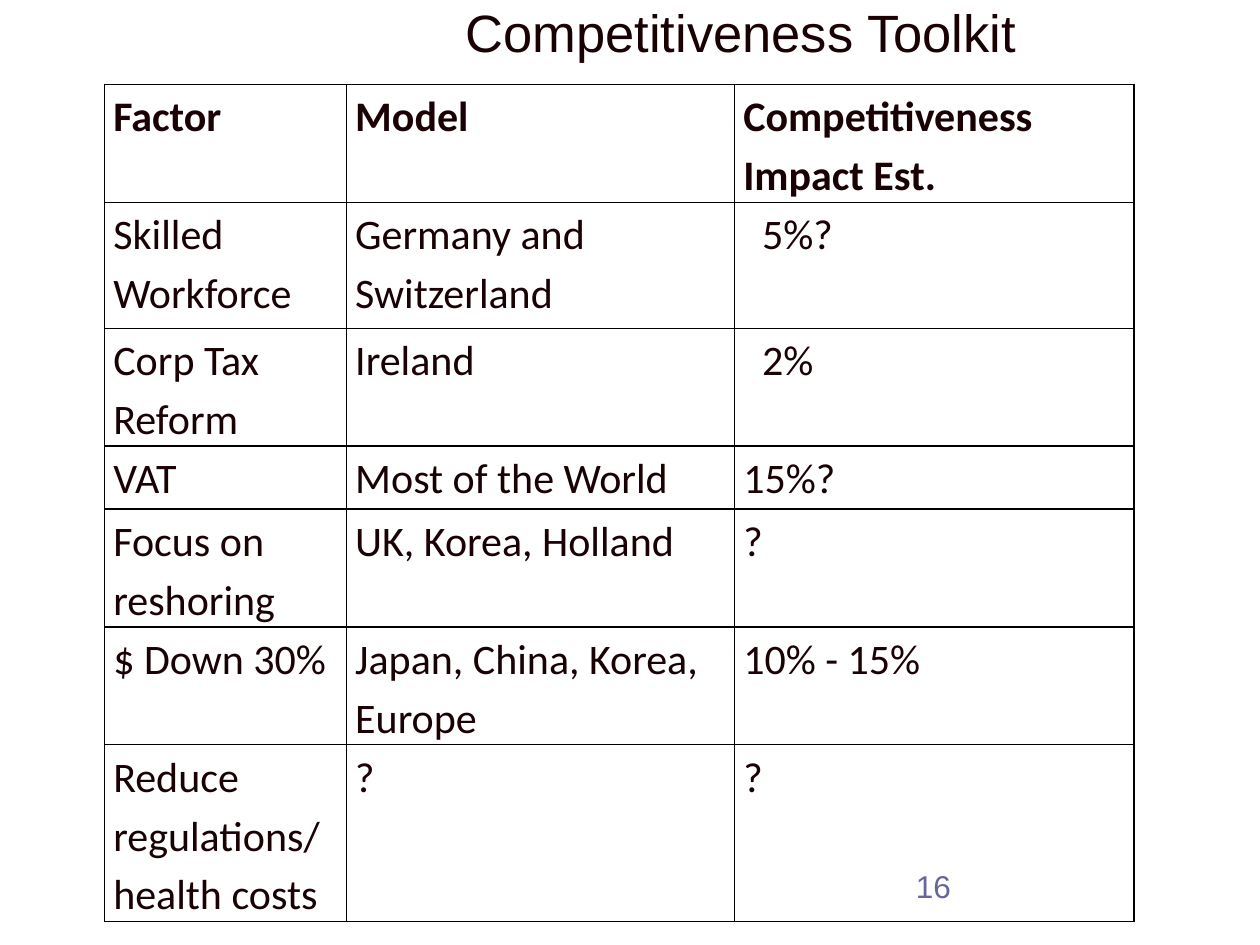
from dataclasses import dataclass

from lxml import etree
from pptx import Presentation
from pptx.dml.color import RGBColor
from pptx.enum.text import MSO_ANCHOR, PP_ALIGN
from pptx.oxml.ns import qn
from pptx.util import Inches, Pt

MIDDLE = MSO_ANCHOR.MIDDLE
CENTER = PP_ALIGN.CENTER
TITLE_ONLY = 5


@dataclass(frozen=True)
class Theme:
    """Colours, fonts and type sizes of the slide."""
    ink: str = "190104"
    rule: str = "000000"
    page: str = "666699"
    head: str = "Arial"
    body: str = "Calibri"
    title_size: int = 30
    cell_size: int = 24
    page_size: int = 18
    rule_width: int = 1


THEME = Theme()
COLS = (1.92, 3.08, 3.17)
LINES = (0.92, 1, 0.92, 0.5, 0.92, 0.92, 1.38)
INSET = 0.07
INDENT = 0.15
INDENTED = {"5%?", "2%"}
ROWS = (
    ("Factor", "Model", "Competitiveness Impact Est."),
    ("Skilled Workforce", "Germany and Switzerland", "5%?"),
    ("Corp Tax Reform", "Ireland", "2%"),
    ("VAT", "Most of the World", "15%?"),
    ("Focus on reshoring", "UK, Korea, Holland", "?"),
    ("$ Down 30%", "Japan, China, Korea, Europe", "10% - 15%"),
    ("Reduce regulations/ health costs", "?", "?"),
)


def apply(item, values):
    """Set each named attribute on an item."""
    for name, value in values.items():
        setattr(item, name, value)


def place(shape, left, top, width, height):
    """Move and size a shape in inches."""
    names = ("left", "top", "width", "height")
    apply(shape, dict(zip(names, map(Inches, (left, top, width, height)))))


def write(frame, text, color, **style):
    """Write one formatted paragraph and return it."""
    para = frame.paragraphs[0]
    run = para.add_run()
    run.text = text
    apply(run.font, style)
    run.font.color.rgb = RGBColor.from_string(color)
    return para


def add_title(slide, text):
    """Place and fill the title."""
    title = slide.shapes.title
    place(title, 1.92, -0.25, 7.92, 1)
    apply(title.text_frame, {"word_wrap": True, "vertical_anchor": MIDDLE})
    para = write(title.text_frame, text, THEME.ink, name=THEME.head,
                 size=Pt(THEME.title_size))
    para.alignment = CENTER


def add_rules(cell):
    """Draw a line on all four sides of a cell."""
    props = cell._tc.get_or_add_tcPr()
    for spot, side in enumerate(("lnL", "lnR", "lnT", "lnB")):
        line = etree.Element(qn(f"a:{side}"), w=str(Pt(THEME.rule_width)))
        fill = etree.SubElement(line, qn("a:solidFill"))
        etree.SubElement(fill, qn("a:srgbClr"), val=THEME.rule)
        props.insert(spot, line)


def fill_cell(cell, text, bold):
    """Format a cell and write its text."""
    left = INSET + (INDENT if text in INDENTED else 0)
    apply(cell, {"margin_left": Inches(left), "margin_right": Inches(INSET),
                 "margin_top": 0, "margin_bottom": 0})
    cell.fill.background()
    add_rules(cell)
    para = write(cell.text_frame, text, THEME.ink, name=THEME.body,
                 size=Pt(THEME.cell_size), bold=bold)
    para.line_spacing = 1.15


def add_grid(slide):
    """Add the table of factors."""
    box = map(Inches, (0.83, 0.67, sum(COLS), sum(LINES)))
    table = slide.shapes.add_table(len(ROWS), len(COLS), *box).table
    apply(table, {"first_row": False, "horz_banding": False})
    for col, width in zip(table.columns, COLS):
        col.width = Inches(width)
    for row, height in zip(table.rows, LINES):
        row.height = Inches(height)
    for r, texts in enumerate(ROWS):
        for c, text in enumerate(texts):
            fill_cell(table.cell(r, c), text, r == 0)


def add_page(slide, text):
    """Add the page number."""
    box = slide.shapes.add_textbox(*map(Inches, (7.17, 6.83, 2.33, 0.5)))
    box.text_frame.word_wrap = True
    write(box.text_frame, text, THEME.page, name=THEME.head,
          size=Pt(THEME.page_size))


def main():
    """Build and save the slide."""
    deck = Presentation()
    apply(deck, {"slide_width": Inches(10), "slide_height": Inches(7.5)})
    slide = deck.slides.add_slide(deck.slide_layouts[TITLE_ONLY])
    add_title(slide, "Competitiveness Toolkit")
    add_grid(slide)
    add_page(slide, "16")
    deck.save("out.pptx")


if __name__ == "__main__":
    main()
